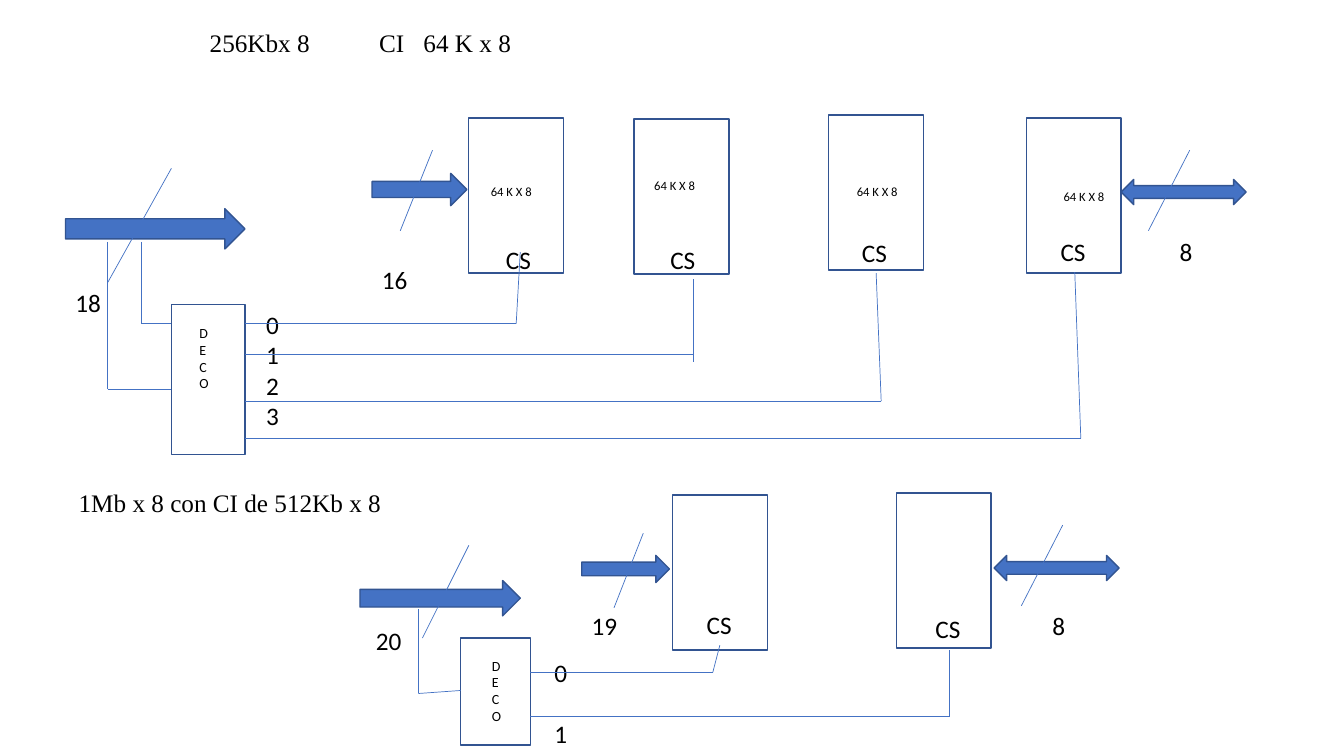
from itertools import pairwise

from lxml.etree import SubElement
from pptx import Presentation
from pptx.dml.color import RGBColor
from pptx.enum.shapes import MSO_CONNECTOR, MSO_SHAPE
from pptx.enum.text import MSO_ANCHOR, MSO_AUTO_SIZE, PP_ALIGN
from pptx.oxml.ns import qn
from pptx.util import Inches, Pt

COLORS = {"fill": "4472C4", "edge": "325491", "wire": "4472C4", "text": "000000"}
SANS, SERIF = "Calibri", "Times New Roman"

TITLE = "256Kbx 8\tCI\t64 K x 8"
TITLE_BOX = (1.98, 0.22, 4.11, 0.4)
TABS = (1.68, 2.12)
HEADING = "1Mb x 8 con CI de 512Kb x 8"
HEADING_BOX = (0.22, 4.64, 3.75, 0.5)

CHIP_SIZE = (0.94, 1.54)
CHIPS = [
    ((4.65, 1.17), (4.92, 2.37), (4.77, 1.78)),
    ((6.29, 1.18), (6.55, 2.37), (6.39, 1.72)),
    ((8.22, 1.14), (8.45, 2.31), (8.4, 1.78)),
    ((10.18, 1.17), (10.42, 2.3), (10.45, 1.82)),
    ((6.67, 4.91), (6.91, 6), None),
    ((8.89, 4.89), (9.18, 6.04), None),
]
DECODERS = [
    ((1.7, 3.02, 0.73, 1.49), (1.88, 3.17)),
    ((4.57, 6.33, 0.69, 1.06), (4.78, 6.47)),
]
OUTPUTS = [
    ("0\n1\n2\n3", (2.54, 3.02, 0.41, 1.31), 0),
    ("0\n1", (5.4, 6.47, 0.27, 1.01), 22),
]
ONE, TWO = MSO_SHAPE.RIGHT_ARROW, MSO_SHAPE.LEFT_RIGHT_ARROW
BUSES = [
    (ONE, (0.65, 2.07, 1.78, 0.4), [(1.7, 1.67), (1.07, 2.8)], "18", (0.65, 2.8, 0.88, 0.4)),
    (ONE, (3.69, 1.72, 0.94, 0.32), [(4.29, 1.49), (3.97, 2.29)], "16", (3.69, 2.57, 0.88, 0.4)),
    (TWO, (11.12, 1.78, 1.24, 0.25), [(11.8, 1.49), (11.39, 2.29)], "8", (11.6, 2.29, 0.41, 0.42)),
    (ONE, (3.57, 5.76, 1.59, 0.35), [(4.65, 5.41), (4.19, 6.33)], "20", (3.63, 6.15, 0.52, 0.41)),
    (ONE, (5.77, 5.51, 0.87, 0.27), [(6.38, 5.29), (6.09, 6.03)], "19", (5.77, 6.01, 0.69, 0.4)),
    (TWO, (9.86, 5.51, 1.24, 0.25), [(10.54, 5.21), (10.13, 6.01)], "8", (10.34, 6.01, 0.41, 0.42)),
]
WIRES = [
    [(1.4, 2.4), (1.4, 3.21), (1.7, 3.21)],
    [(1.07, 2.4), (1.07, 3.86), (1.7, 3.86)],
    [(2.43, 3.21), (5.12, 3.21), (5.16, 2.5)],
    [(2.43, 3.52), (6.88, 3.52)],
    [(6.88, 2.77), (6.88, 3.59)],
    [(2.43, 3.98), (8.74, 3.98), (8.69, 2.71)],
    [(2.43, 4.35), (10.72, 4.35), (10.66, 2.7)],
    [(4.15, 6.04), (4.15, 6.88), (4.57, 6.85)],
    [(5.26, 6.67), (7.07, 6.67), (7.14, 6.4)],
    [(5.26, 7.11), (9.42, 7.11), (9.42, 6.45)],
]

deck = Presentation()
deck.slide_width, deck.slide_height = Inches(13.33), Inches(7.5)
slide = deck.slides.add_slide(deck.slide_layouts[5])
shapes = slide.shapes


def inches(nums):
    return [Inches(n) for n in nums]


def write(text, box, size=18, font=SANS, align=PP_ALIGN.LEFT, gap=0, ratio=1.0, inset=0.1, holder=None):
    item = holder or shapes.add_textbox(*inches(box))
    item.left, item.top, item.width, item.height = inches(box)
    frame = item.text_frame
    frame.word_wrap = True
    frame.auto_size = MSO_AUTO_SIZE.SHAPE_TO_FIT_TEXT
    frame.vertical_anchor = MSO_ANCHOR.TOP
    frame.margin_left = Inches(inset)
    for row, line in enumerate(text.split("\n")):
        para = frame.add_paragraph() if row else frame.paragraphs[0]
        para.alignment = align
        para.line_spacing = ratio
        para.space_before = Pt(gap if row else 0)
        run = para.add_run()
        run.text = line
        run.font.name, run.font.size = font, Pt(size)
        run.font.color.rgb = RGBColor.from_string(COLORS["text"])
    return item


def draw(kind, box, fill=None):
    item = shapes.add_shape(kind, *inches(box))
    item.shadow.inherit = False
    if fill:
        item.fill.solid()
        item.fill.fore_color.rgb = RGBColor.from_string(fill)
    else:
        item.fill.background()
    item.line.color.rgb = RGBColor.from_string(COLORS["edge"])
    item.line.width = Pt(1)


def wire(points):
    for start, end in pairwise(points):
        item = shapes.add_connector(MSO_CONNECTOR.STRAIGHT, *inches(start + end))
        item.line.color.rgb = RGBColor.from_string(COLORS["wire"])
        item.line.width = Pt(0.5)
        SubElement(item._element.spPr, qn("a:effectLst"))


title = write(TITLE, TITLE_BOX, font=SERIF, holder=shapes.title)
stops = SubElement(title.text_frame.paragraphs[0]._p.get_or_add_pPr(), qn("a:tabLst"))
for tab in TABS:
    SubElement(stops, qn("a:tab"), pos=str(Inches(tab)), algn="l")
write(HEADING, HEADING_BOX, font=SERIF, align=PP_ALIGN.JUSTIFY, ratio=1.5, inset=0.56)

for spot, select, label in CHIPS:
    draw(MSO_SHAPE.RECTANGLE, spot + CHIP_SIZE)
    write("CS", select + (0.48, 0.4))
    if label:
        write("64 K X 8", label + (0.68, 0.25), size=9)

for box, label in DECODERS:
    draw(MSO_SHAPE.RECTANGLE, box)
    write("D\nE\nC\nO", label + (0.3, 0.77), size=10)

for text, box, gap in OUTPUTS:
    write(text, box, gap=gap)

for kind, box, slash, bits, label in BUSES:
    draw(kind, box, fill=COLORS["fill"])
    wire(slash)
    write(bits, label)

for points in WIRES:
    wire(points)

deck.save("out.pptx")
